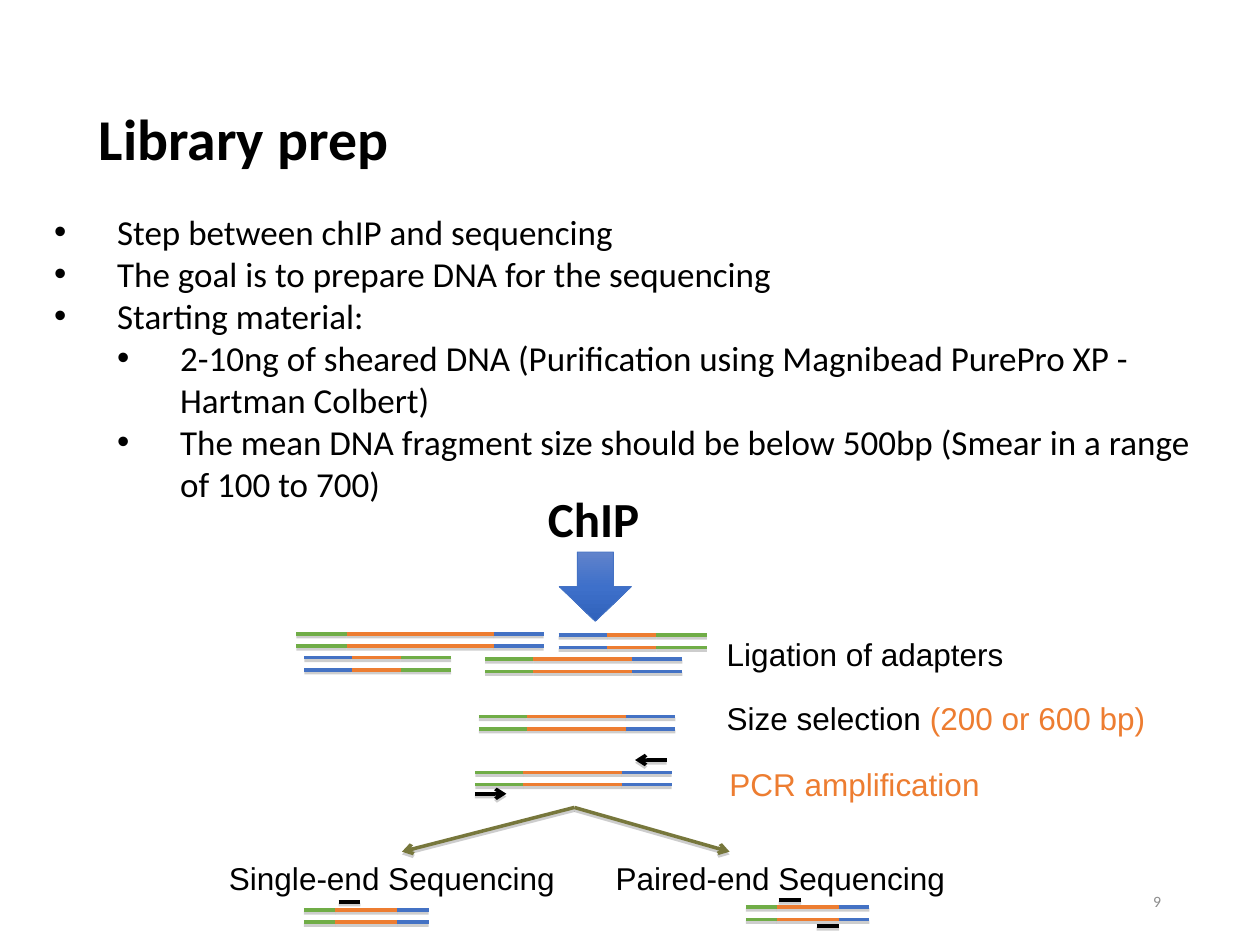
import dataclasses
import typing

import pptx
import pptx.dml.color
import pptx.enum.dml
import pptx.enum.shapes
import pptx.enum.text
import pptx.oxml
import pptx.util

Pt = pptx.util.Pt
ALIGN = pptx.enum.text.PP_ALIGN
ANCHOR = pptx.enum.text.MSO_ANCHOR
NS = 'xmlns:a="http://schemas.openxmlformats.org/drawingml/2006/main"'
BLACK, GREEN, ORANGE, BLUE, OLIVE = "000000", "70AD47", "ED7D31", "4472C4", "77773C"
ADAPT = (GREEN, ORANGE, BLUE)
FLIP = (BLUE, ORANGE, GREEN)


@dataclasses.dataclass
class Duplex:
    edges: tuple[float, ...]
    top: float
    tints: tuple[str, ...] = ADAPT


@dataclasses.dataclass
class Stroke:
    start: tuple[float, float]
    end: tuple[float, float]
    tint: str = BLACK
    arrow: bool = False


@dataclasses.dataclass
class Label:
    box: tuple[float, float, float, float]
    runs: tuple[tuple[str, str], ...]
    size: float = 18
    font: str = "Arial"
    bold: bool = False
    align: typing.Any = ALIGN.LEFT
    anchor: typing.Any = ANCHOR.TOP
    space: float = 1.0


def paint(text: str) -> pptx.dml.color.RGBColor:
    return pptx.dml.color.RGBColor.from_string(text)


def xml(text: str) -> typing.Any:
    return pptx.oxml.parse_xml(text)


def shade(blur: float = 0, dist: float = 1.6) -> typing.Any:
    return xml(
        f'<a:effectLst {NS}><a:outerShdw blurRad="{Pt(blur)}" dist="{Pt(dist)}" '
        'dir="5400000" rotWithShape="0"><a:srgbClr val="808080">'
        '<a:alpha val="38000"/></a:srgbClr></a:outerShdw></a:effectLst>'
    )


def style(run: typing.Any, size: float, font: str, tint: str, bold: bool = False) -> None:
    run.font.size = Pt(size)
    run.font.name = font
    run.font.bold = bold
    run.font.color.rgb = paint(tint)


def draw(slide: typing.Any, item: Stroke) -> None:
    line = slide.shapes.add_connector(
        pptx.enum.shapes.MSO_CONNECTOR.STRAIGHT,
        *(Pt(v) for v in item.start + item.end),
    )
    line.line.color.rgb = paint(item.tint)
    line.line.width = Pt(2)
    if item.arrow:
        line.line._get_or_add_ln().append(xml(f'<a:tailEnd {NS} type="arrow"/>'))
    line._element.spPr.append(shade())


def pair(slide: typing.Any, item: Duplex) -> None:
    for y in (item.top, item.top + 7):
        for left, right, tint in zip(item.edges, item.edges[1:], item.tints):
            draw(slide, Stroke((left, y), (right, y), tint))


def write(slide: typing.Any, item: Label) -> typing.Any:
    box = slide.shapes.add_textbox(*(Pt(v) for v in item.box))
    frame = box.text_frame
    frame.word_wrap = True
    frame.vertical_anchor = item.anchor
    para = frame.paragraphs[0]
    para.alignment = item.align
    para.line_spacing = item.space
    for text, tint in item.runs:
        run = para.add_run()
        run.text = text
        style(run, item.size, item.font, tint, item.bold)
    return box


def points(slide: typing.Any, items: tuple[tuple[int, str], ...]) -> None:
    box = slide.shapes.add_textbox(Pt(23.8), Pt(116.6), Pt(678.2), Pt(177))
    frame = box.text_frame
    frame.word_wrap = True
    frame.text = "\n".join(text for _, text in items)
    for para, (level, _) in zip(frame.paragraphs, items):
        para.level = level
        props = para._p.get_or_add_pPr()
        props.set("marL", str(Pt(36 * (level + 1))))
        props.set("indent", str(Pt(-36)))
        props.append(xml(f'<a:buFont {NS} typeface="Arial"/>'))
        props.append(xml(f'<a:buChar {NS} char="•"/>'))
        style(para.runs[0], 20, "Calibri", BLACK)


def block(slide: typing.Any) -> None:
    arrow = slide.shapes.add_shape(
        pptx.enum.shapes.MSO_SHAPE.DOWN_ARROW, Pt(319.6), Pt(315.4), Pt(41.2), Pt(39.6)
    )
    arrow.shadow.inherit = False
    arrow.line.color.rgb = paint(BLUE)
    arrow.line.width = Pt(0.5)
    stops = ((0, "6183CB"), (50, "3E70CA"), (100, "3062BB"))
    marks = "".join(
        f'<a:gs pos="{at * 1000}"><a:srgbClr val="{tint}"/></a:gs>' for at, tint in stops
    )
    arrow._element.spPr.insert(2, xml(
        f'<a:gradFill {NS} rotWithShape="1"><a:gsLst>{marks}</a:gsLst>'
        '<a:lin ang="5400000" scaled="0"/></a:gradFill>'
    ))


LABELS = (
    Label((49.5, 28.8, 621, 104.4), (("Library prep", BLACK),), 33, "Calibri", True,
          anchor=ANCHOR.MIDDLE, space=0.9),
    Label((508.5, 500.5, 162, 28.8), (("9", "8C8C8C"),), 9, "Calibri",
          align=ALIGN.RIGHT, anchor=ANCHOR.MIDDLE),
    Label((408.2, 359.3, 257.8, 29), (("Ligation of adapters", BLACK),)),
    Label((408.2, 396, 262.8, 29),
          (("Size selection ", BLACK), ("(200 or 600 bp)", ORANGE))),
    Label((409.7, 433.4, 167.8, 29), (("PCR amplification", ORANGE),)),
    Label((123.8, 487.4, 446.4, 29),
          (("Single-end Sequencing\t Paired-end Sequencing", BLACK),)),
)
DUPLEXES = (
    Duplex((169.4, 198, 282.2, 310.7), 362.2),
    Duplex((319.2, 347, 375.1, 403.9), 363, FLIP),
    Duplex((174, 201, 229, 257.8), 375.8, FLIP),
    Duplex((277.2, 304.8, 361.4, 390), 376.6),
    Duplex((273.6, 301, 357.6, 386), 409.5),
    Duplex((271.6, 299, 355.4, 383.8), 441.3),
    Duplex((173.7, 191.5, 227, 245), 520),
    Duplex((426.2, 444, 479.3, 496.8), 518.4),
)
FORK = (328.2, 461.4)
STROKES = (
    Stroke((380.9, 434.3), (362.9, 434.3), arrow=True),
    Stroke((271.4, 453.6), (289.4, 453.6), arrow=True),
    Stroke(FORK, (229.7, 486.7), OLIVE, True),
    Stroke(FORK, (416.9, 486.7), OLIVE, True),
    Stroke((193.5, 515.4), (206, 515.4)),
    Stroke((445, 514.3), (457.8, 514.3)),
    Stroke((466.7, 529.2), (479.5, 529.2)),
)
POINTS = (
    (0, "Step between chIP and sequencing"),
    (0, "The goal is to prepare DNA for the sequencing"),
    (0, "Starting material:"),
    (1, "2-10ng of sheared DNA (Purification using Magnibead PurePro XP - "
        "Hartman Colbert)"),
    (1, "The mean DNA fragment size should be below 500bp (Smear in a range "
        "of 100 to 700)"),
)


def main() -> None:
    deck = pptx.Presentation()
    deck.slide_width, deck.slide_height = Pt(720), Pt(540)
    slide = deck.slides.add_slide(deck.slide_layouts[6])
    for item in LABELS:
        write(slide, item)
    for item in DUPLEXES:
        pair(slide, item)
    for item in STROKES:
        draw(slide, item)
    chip = write(slide, Label((306, 275.8, 92.2, 41), (("ChIP", BLACK),),
                              28, "Calibri", True))
    font = chip.text_frame.paragraphs[0].runs[0]._r.get_or_add_rPr()
    font.insert(1, shade(3, 3))
    block(slide)
    points(slide, POINTS)
    deck.save("out.pptx")


if __name__ == "__main__":
    main()
